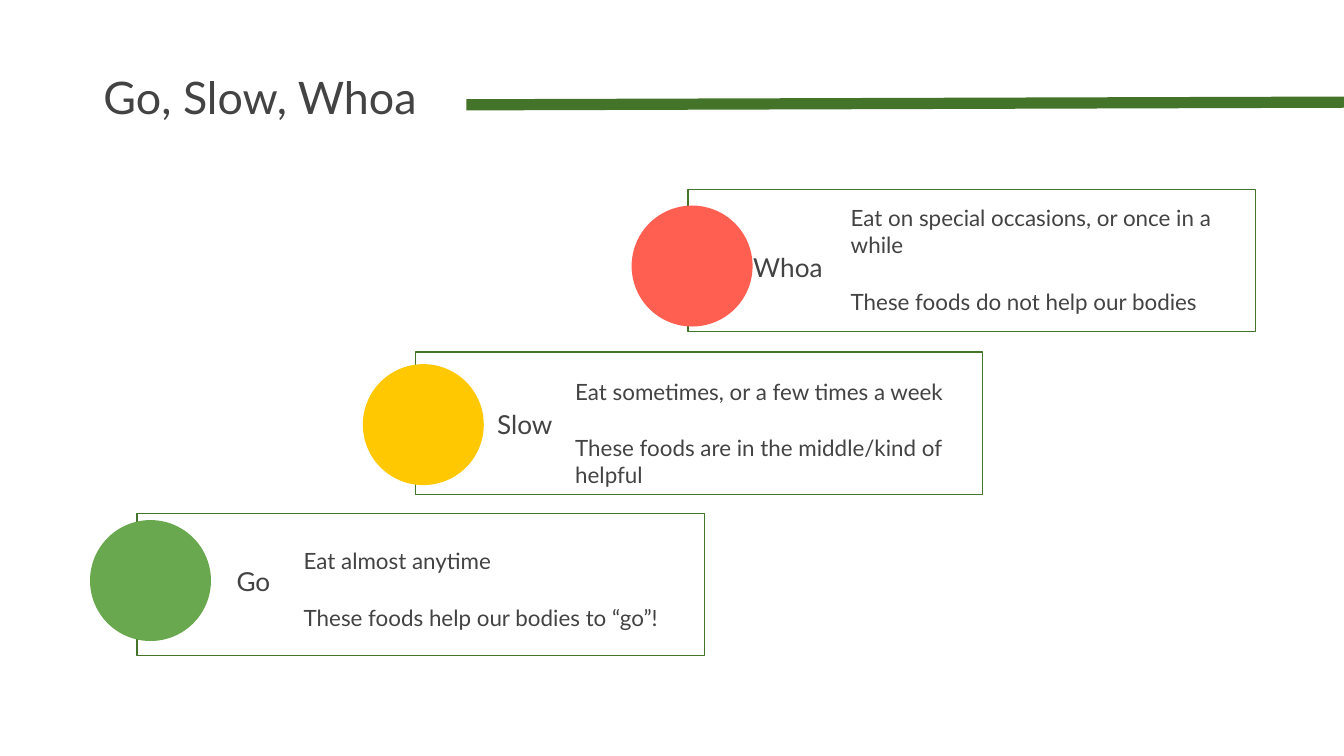
from dataclasses import dataclass

from lxml.etree import SubElement
from pptx import Presentation
from pptx.dml.color import RGBColor
from pptx.enum.shapes import MSO_CONNECTOR, MSO_SHAPE
from pptx.enum.text import MSO_ANCHOR, MSO_AUTO_SIZE, PP_ALIGN
from pptx.oxml.ns import qn
from pptx.util import Inches, Pt

GRAY = RGBColor(0x43, 0x43, 0x43)
DARK_GREEN = RGBColor(0x43, 0x74, 0x2A)
RED = RGBColor(0xFF, 0x5F, 0x51)
YELLOW = RGBColor(0xFF, 0xC8, 0x00)
GREEN = RGBColor(0x6A, 0xA8, 0x4F)
FONT = "Lato"
COMPARISON_LAYOUT = 4
SLIDE_WIDTH = 10
SLIDE_HEIGHT = SLIDE_WIDTH * 9 / 16
BOX_SIZE = (4.22, 1.06)
LIGHT_SIZE = (0.9, 0.9)


@dataclass
class Category:
    name: str
    color: RGBColor
    advice: tuple
    box: tuple
    light: tuple
    label: tuple
    body: tuple


CATEGORIES = (
    Category("Go", GREEN,
             ("Eat almost anytime", "These foods help our bodies to “go”!"),
             box=(1.02, 3.82), light=(0.67, 3.87),
             label=(1.09, 4.11, 1.02, 0.66), body=(2.16, 3.97, 2.96, 0.87)),
    Category("Slow", YELLOW,
             ("Eat sometimes, or a few times a week",
              "These foods are in the middle/kind of helpful"),
             box=(3.09, 2.62), light=(2.7, 2.71),
             label=(3.19, 2.94, 1.02, 0.66), body=(4.18, 2.71, 3.06, 0.87)),
    Category("Whoa", RED,
             ("Eat on special occasions, or once in a while",
              "These foods do not help our bodies"),
             box=(5.12, 1.41), light=(4.7, 1.53),
             label=(5.19, 1.77, 1.03, 0.66), body=(6.23, 1.42, 3.11, 0.55)),
)


def place(shape, area):
    shape.left, shape.top, shape.width, shape.height = map(Inches, area)


def write(shape, lines, size, align=PP_ALIGN.LEFT, anchor=MSO_ANCHOR.TOP):
    frame = shape.text_frame
    frame.text = "\n".join(lines)
    frame.word_wrap = True
    frame.auto_size = MSO_AUTO_SIZE.NONE
    frame.vertical_anchor = anchor
    frame.margin_left = frame.margin_right = Inches(0.1)
    frame.margin_top = frame.margin_bottom = Inches(0.1)
    for number, paragraph in enumerate(frame.paragraphs):
        paragraph.alignment = align
        paragraph.space_before = Pt(16 if number else 0)
        paragraph.font.name = FONT
        paragraph.font.size = Pt(size)
        paragraph.font.bold = False
        paragraph.font.color.rgb = GRAY


def remove_bullets(shape):
    for paragraph in shape.text_frame.paragraphs:
        properties = paragraph._p.get_or_add_pPr()
        properties.set("marL", "0")
        properties.set("indent", "0")
        bullet_off = properties.makeelement(qn("a:buNone"))
        properties.insert_element_before(bullet_off, "a:tabLst", "a:defRPr")


def add_title(slide, text):
    title = slide.shapes.title
    place(title, (0.67, 0.36, 5.91, 0.66))
    write(title, [text], 24, anchor=MSO_ANCHOR.BOTTOM)


def add_rule(slide):
    rule = slide.shapes.add_connector(
        MSO_CONNECTOR.STRAIGHT,
        Inches(3.47), Inches(0.78), Inches(10.04), Inches(0.76))
    rule.line.color.rgb = DARK_GREEN
    rule.line.width = Pt(6)
    SubElement(rule._element.spPr, qn("a:effectLst"))


def add_box(slide, corner):
    box = slide.shapes.add_shape(
        MSO_SHAPE.RECTANGLE, *map(Inches, corner + BOX_SIZE))
    box.shadow.inherit = False
    box.fill.background()
    box.line.color.rgb = DARK_GREEN
    box.line.width = Pt(0.75)


def add_light(slide, corner, color):
    light = slide.shapes.add_shape(
        MSO_SHAPE.OVAL, *map(Inches, corner + LIGHT_SIZE))
    light.shadow.inherit = False
    light.fill.solid()
    light.fill.fore_color.rgb = color
    light.line.fill.background()


def add_category(slide, category, body):
    add_box(slide, category.box)
    add_light(slide, category.light, category.color)
    label = slide.shapes.add_textbox(*map(Inches, category.label))
    write(label, [category.name], 14, align=PP_ALIGN.RIGHT)
    place(body, category.body)
    write(body, category.advice, 12)
    remove_bullets(body)


def main():
    presentation = Presentation()
    presentation.slide_width = Inches(SLIDE_WIDTH)
    presentation.slide_height = Inches(SLIDE_HEIGHT)
    layout = presentation.slide_layouts[COMPARISON_LAYOUT]
    slide = presentation.slides.add_slide(layout)

    add_title(slide, "Go, Slow, Whoa")
    add_rule(slide)
    _, *bodies, unused = slide.placeholders
    for category, body in zip(CATEGORIES, bodies):
        add_category(slide, category, body)
    unused.element.getparent().remove(unused.element)

    presentation.save("out.pptx")


if __name__ == "__main__":
    main()
